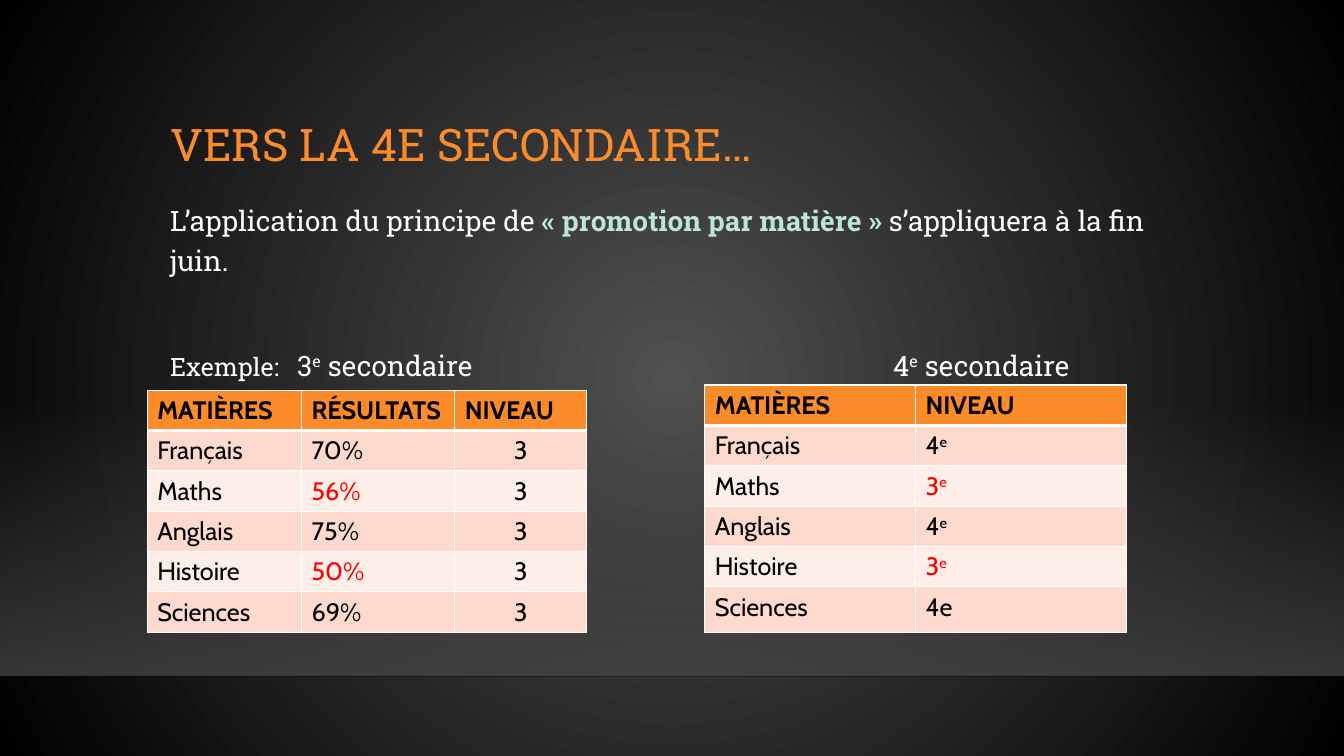
from dataclasses import dataclass

from lxml.etree import SubElement
from pptx import Presentation
from pptx.dml.color import RGBColor
from pptx.enum.shapes import MSO_CONNECTOR as Connector, MSO_SHAPE as Shape
from pptx.enum.text import MSO_ANCHOR as Anchor, PP_ALIGN as Align
from pptx.oxml import parse_xml
from pptx.oxml.ns import nsdecls, qn
from pptx.util import Inches, Pt


@dataclass(frozen=True)
class Theme:
    glow: str = "505050"
    edge: str = "000000"
    floor: str = "454545"
    horizon: str = "000001"
    accent: str = "FB8C29"
    mint: str = "BCE7D4"
    white: str = "FFFFFF"
    black: str = "000000"
    failed: str = "FF0000"
    bands: tuple = ("FDDACD", "FEEEE8")
    text_font: str = "Roboto Slab"
    table_font: str = "Cabin"
    title_size: int = 32
    body_size: int = 20
    small_size: int = 18


class SlideBuilder:
    def __init__(self, deck, theme):
        self.theme = theme
        self.slide = deck.slides.add_slide(deck.slide_layouts[6])
        self.shapes = self.slide.shapes

    def background(self):
        """Radial gradient from the centre of the slide."""
        stops = "".join(
            f'<a:gs pos="{position}"><a:srgbClr val="{color}"/></a:gs>'
            for position, color in ((0, self.theme.glow), (100000, self.theme.edge)))
        self.slide.element.cSld.insert(0, parse_xml(
            f'<p:bg {nsdecls("p", "a")}><p:bgPr><a:gradFill rotWithShape="1">'
            f'<a:gsLst>{stops}</a:gsLst><a:path path="circle">'
            '<a:fillToRect l="50000" t="50000" r="50000" b="50000"/></a:path>'
            '</a:gradFill><a:effectLst/></p:bgPr></p:bg>'))

    def floor(self, left, top, width, height):
        """Band that fades in downwards."""
        band = self.shapes.add_shape(
            Shape.RECTANGLE, *map(Inches, (left, top, width, height)))
        band.shadow.inherit = False
        band.line.fill.background()
        band.fill.gradient()
        band.fill.gradient_angle = 270
        for stop, position, alpha in zip(band.fill.gradient_stops, (0, 1), (0, 80000)):
            stop.position = position
            stop.color.rgb = RGBColor.from_string(self.theme.floor)
        for color, alpha in zip(band.element.spPr.iter(qn("a:srgbClr")), (0, 80000)):
            SubElement(color, qn("a:alpha")).set("val", str(alpha))

    def line(self, left, top, right):
        rule = self.shapes.add_connector(
            Connector.STRAIGHT, *map(Inches, (left, top, right, top)))
        rule.line.width = Pt(1)
        rule.line.color.rgb = RGBColor.from_string(self.theme.horizon)
        properties = rule.element.spPr
        for color in properties.iter(qn("a:srgbClr")):
            SubElement(color, qn("a:alpha")).set("val", "20000")
        SubElement(properties, qn("a:effectLst"))

    def spans(self, para, text, color, **formats):
        """Add text to a paragraph; parts between ^ marks are superscript."""
        for index, piece in enumerate(text.split("^")):
            if not piece:
                continue
            span = para.add_run()
            span.text = piece
            for name, value in formats.items():
                setattr(span.font, name, value)
            span.font.color.rgb = RGBColor.from_string(color)
            if index % 2:
                span.font._element.set("baseline", "30000")

    def text(self, left, top, width, height, paragraphs, anchor=Anchor.TOP):
        """Each paragraph is (formats, tab stops, spans)."""
        box = self.shapes.add_textbox(*map(Inches, (left, top, width, height)))
        frame = box.text_frame
        frame.word_wrap = True
        frame.vertical_anchor = anchor
        for index, (formats, tabs, spans) in enumerate(paragraphs):
            para = frame.add_paragraph() if index else frame.paragraphs[0]
            for name, value in formats.items():
                setattr(para, name, value)
            if tabs:
                stops = SubElement(para._p.get_or_add_pPr(), qn("a:tabLst"))
                for position in tabs:
                    stop = SubElement(stops, qn("a:tab"))
                    stop.set("pos", str(Inches(position)))
                    stop.set("algn", "l")
            for content, color, size, bold in spans:
                self.spans(para, content, color, size=Pt(size), bold=bold,
                           name=self.theme.text_font)

    def borders(self, cell, row):
        widths = {"L": 1, "R": 1, "T": 3 if row == 1 else 1, "B": 1 if row else 3}
        for index, (side, width) in enumerate(widths.items()):
            cell._tc.get_or_add_tcPr().insert(index, parse_xml(
                f'<a:ln{side} {nsdecls("a")} w="{Pt(width)}"><a:solidFill>'
                f'<a:srgbClr val="{self.theme.white}"/></a:solidFill></a:ln{side}>'))

    def table(self, left, top, widths, heights, rows, failed, centered=()):
        theme = self.theme
        grid = self.shapes.add_table(
            len(rows), len(widths),
            *map(Inches, (left, top, sum(widths), sum(heights)))).table
        for column, width in zip(grid.columns, widths):
            column.width = Inches(width)
        for r, (values, height) in enumerate(zip(rows, heights)):
            grid.rows[r].height = Inches(height)
            for c, value in enumerate(values):
                cell = grid.cell(r, c)
                cell.fill.solid()
                cell.fill.fore_color.rgb = RGBColor.from_string(
                    theme.bands[(r - 1) % 2] if r else theme.accent)
                self.borders(cell, r)
                para = cell.text_frame.paragraphs[0]
                if r and c in centered:
                    para.alignment = Align.CENTER
                self.spans(para, value, theme.failed if value in failed else theme.black,
                           size=Pt(theme.small_size), bold=r == 0, name=theme.table_font)


def main():
    deck = Presentation()
    deck.slide_width, deck.slide_height = Inches(13.33), Inches(7.5)
    theme = Theme()
    page = SlideBuilder(deck, theme)

    # Backdrop
    page.background()
    page.floor(0, 3.96, 13.33, 2.74)
    page.line(0, 6.71, 13.33)

    # Title
    title = ("VERS LA 4E SECONDAIRE…", theme.accent, theme.title_size, False)
    page.text(1.59, 0.88, 10.16, 1.15, [({"line_spacing": 0.9}, (), [title])],
              Anchor.MIDDLE)

    # Principle and table headings
    white, size = theme.white, theme.body_size
    principle = [
        ("L’application du principe de ", white, size, False),
        ("«\u00a0promotion par matière\u00a0» ", theme.mint, size, True),
        ("s’appliquera à la fin juin.", white, size, False)]
    headings = [
        ("Exemple:", white, theme.small_size, False),
        ("\t3^e^ secondaire\t4^e^ secondaire", white, size, False)]
    page.text(1.59, 1.9, 10.16, 4.37, [
        ({"line_spacing": 1.2}, (), principle),
        ({"line_spacing": 1.2, "space_before": Pt(46)}, (1.26, 7.17), headings)])

    # Results in the third year, then levels in the fourth
    subjects = ("Français", "Maths", "Anglais", "Histoire", "Sciences")
    results = ("70%", "56%", "75%", "50%", "69%")
    levels = ("4^e^", "3^e^", "4^e^", "3^e^", "4e")
    page.table(1.46, 3.87, (1.53, 1.52, 1.31), [0.35] + [0.38] * 5,
               [("MATIÈRES", "RÉSULTATS", "NIVEAU"),
                *((subject, result, "3") for subject, result in zip(subjects, results))],
               failed=("56%", "50%"), centered=(2,))
    page.table(6.99, 3.82, (2.09, 2.09), [0.39] * 5 + [0.45],
               [("MATIÈRES", "NIVEAU"), *zip(subjects, levels)], failed=("3^e^",))

    deck.save("out.pptx")


if __name__ == "__main__":
    main()
